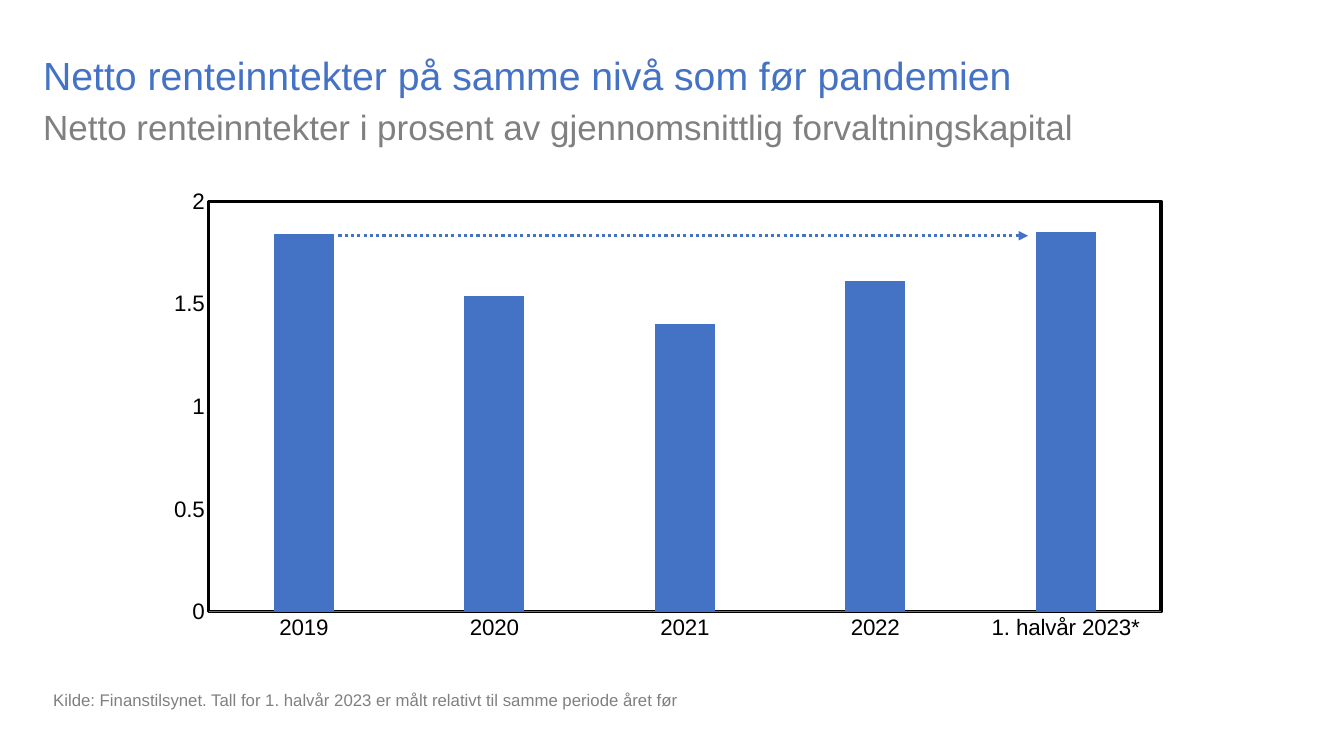
"""Build a slide with a column chart of net interest income."""
import pptx
import pptx.chart.data
import pptx.dml.color
import pptx.enum.chart
import pptx.enum.dml
import pptx.enum.shapes
import pptx.enum.text
import pptx.oxml
import pptx.oxml.ns
import pptx.util

Cm = pptx.util.Cm
Pt = pptx.util.Pt
qn = pptx.oxml.ns.qn
NS = pptx.oxml.ns.nsdecls("a", "c")


def color(code):
    return pptx.dml.color.RGBColor.from_string(code)


class Deck:
    font = "Arial"
    blue = "4472C4"
    gray = "808080"
    black = "000000"

    def __init__(self):
        self.file = pptx.Presentation()
        self.file.slide_width = Cm(33.87)
        self.file.slide_height = Cm(19.05)
        self.slide = self.file.slides.add_slide(self.file.slide_layouts[6])

    def style(self, font, size, code):
        font.name = self.font
        font.size = Pt(size)
        font.color.rgb = color(code)

    def text(self, box, words, size, code, space=0.9, after=0, inset=(0, 0), low=False):
        frame = self.slide.shapes.add_textbox(*map(Cm, box)).text_frame
        frame.word_wrap = True
        frame.margin_left = frame.margin_right = Cm(inset[0])
        frame.margin_top = frame.margin_bottom = Cm(inset[1])
        if low:
            frame.vertical_anchor = pptx.enum.text.MSO_ANCHOR.BOTTOM
        para = frame.paragraphs[0]
        para.line_spacing = space
        para.space_after = Pt(after)
        run = para.add_run()
        run.text = words
        self.style(run.font, size, code)

    def chart(self, box, rates, plot):
        data = pptx.chart.data.CategoryChartData()
        data.categories = list(rates)
        data.add_series("Netto renteinntekter", list(rates.values()))
        kind = pptx.enum.chart.XL_CHART_TYPE.COLUMN_CLUSTERED
        chart = self.slide.shapes.add_chart(kind, *map(Cm, box), data).chart
        chart.has_legend = chart.has_title = False
        self.style(chart.font, 16, self.black)
        bars = chart.plots[0]
        bars.gap_width = 219
        bars.overlap = -27
        bars.vary_by_categories = False
        fill = bars.series[0].format.fill
        fill.solid()
        fill.fore_color.rgb = color(self.blue)

        for axis in (chart.category_axis, chart.value_axis):
            axis.has_major_gridlines = False
            axis.major_tick_mark = pptx.enum.chart.XL_TICK_MARK.NONE
            axis.minor_tick_mark = pptx.enum.chart.XL_TICK_MARK.NONE
            self.style(axis.tick_labels.font, 16, self.black)
        base = chart.category_axis.format.line
        base.color.rgb = color(self.blue)
        base.width = Pt(0.75)
        scale = chart.value_axis
        scale.minimum_scale = 0
        scale.maximum_scale = 2
        scale.major_unit = 0.5
        scale.format.line.fill.background()
        self.frame(chart, plot)

    def frame(self, chart, plot):
        area = chart.plots[0]._element.getparent()
        for old in area.findall(qn("c:layout")):
            area.remove(old)
        sides = "".join(f'<c:{key} val="{val}"/>' for key, val in zip("xywh", plot))
        area.insert(0, pptx.oxml.parse_xml(
            f'<c:layout {NS}><c:manualLayout><c:layoutTarget val="inner"/>'
            f'<c:xMode val="edge"/><c:yMode val="edge"/>{sides}'
            '</c:manualLayout></c:layout>'))
        area.append(pptx.oxml.parse_xml(
            f'<c:spPr {NS}><a:noFill/><a:ln w="{Pt(2.25)}"><a:solidFill>'
            f'<a:srgbClr val="{self.black}"/></a:solidFill></a:ln></c:spPr>'))

    def arrow(self, start, end):
        kind = pptx.enum.shapes.MSO_CONNECTOR.STRAIGHT
        link = self.slide.shapes.add_connector(kind, *map(Cm, start + end))
        link.line.color.rgb = color(self.blue)
        link.line.width = Pt(2.25)
        link.line.dash_style = pptx.enum.dml.MSO_LINE.ROUND_DOT
        link.line._get_or_add_ln().append(
            pptx.oxml.parse_xml(f'<a:tailEnd {NS} type="triangle"/>'))
        link._element.spPr.append(pptx.oxml.parse_xml(f"<a:effectLst {NS}/>"))


def main():
    deck = Deck()
    deck.text((1.09, 0.99, 29.21, 1.5),
              "Netto renteinntekter på samme nivå som før pandemien",
              28, deck.blue, low=True)
    deck.text((1.09, 17.15, 28.5, 0.91),
              "Kilde: Finanstilsynet. Tall for 1. halvår 2023 er målt relativt "
              "til samme periode året før",
              12, deck.gray, space=1.2, after=6, inset=(0.25, 0.13))
    rates = {"2019": 1.84, "2020": 1.54, "2021": 1.4, "2022": 1.61,
             "1. halvår 2023*": 1.85}
    deck.chart((3.84, 4.42, 26.26, 12.73), rates, (0.054, 0.051, 0.914, 0.813))
    deck.text((1.09, 2.79, 30.63, 1.07),
              "Netto renteinntekter i prosent av gjennomsnittlig forvaltningskapital",
              25, deck.gray)
    deck.arrow((8.53, 5.94), (25.91, 5.94))
    deck.file.save("out.pptx")


if __name__ == "__main__":
    main()
